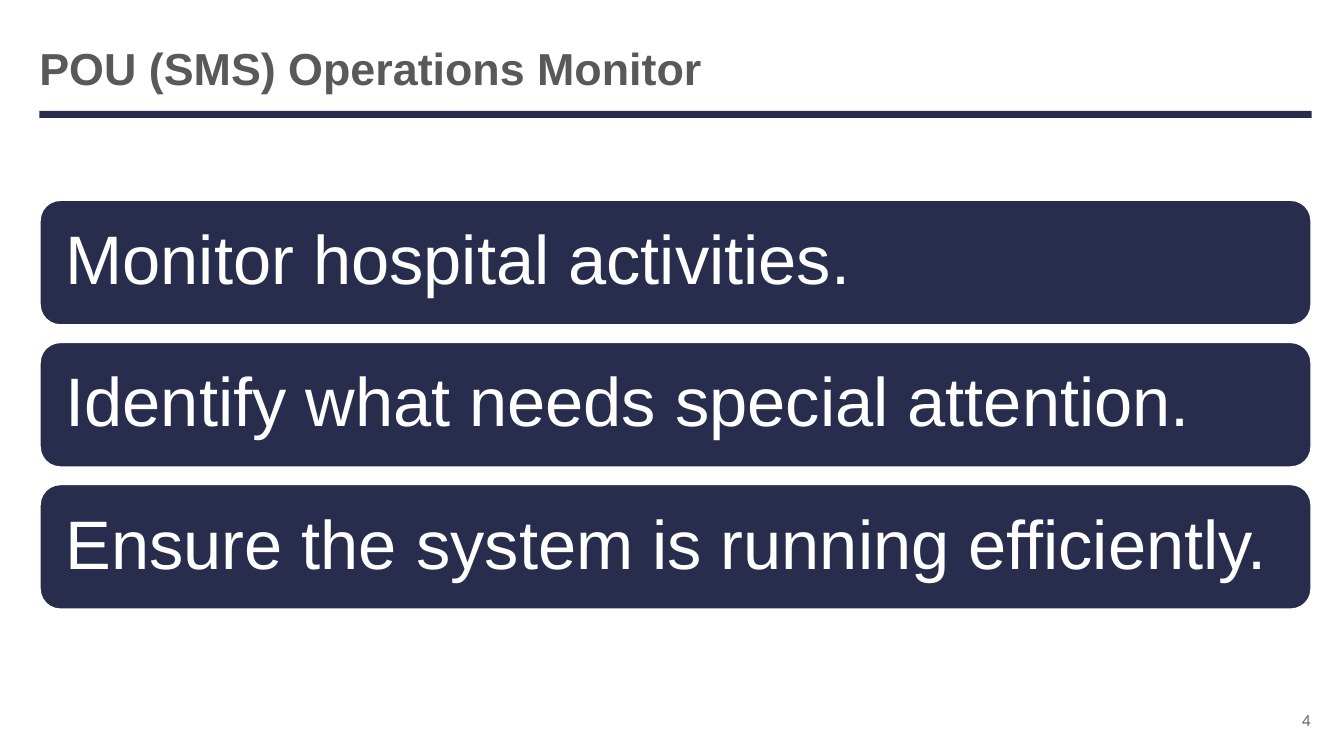
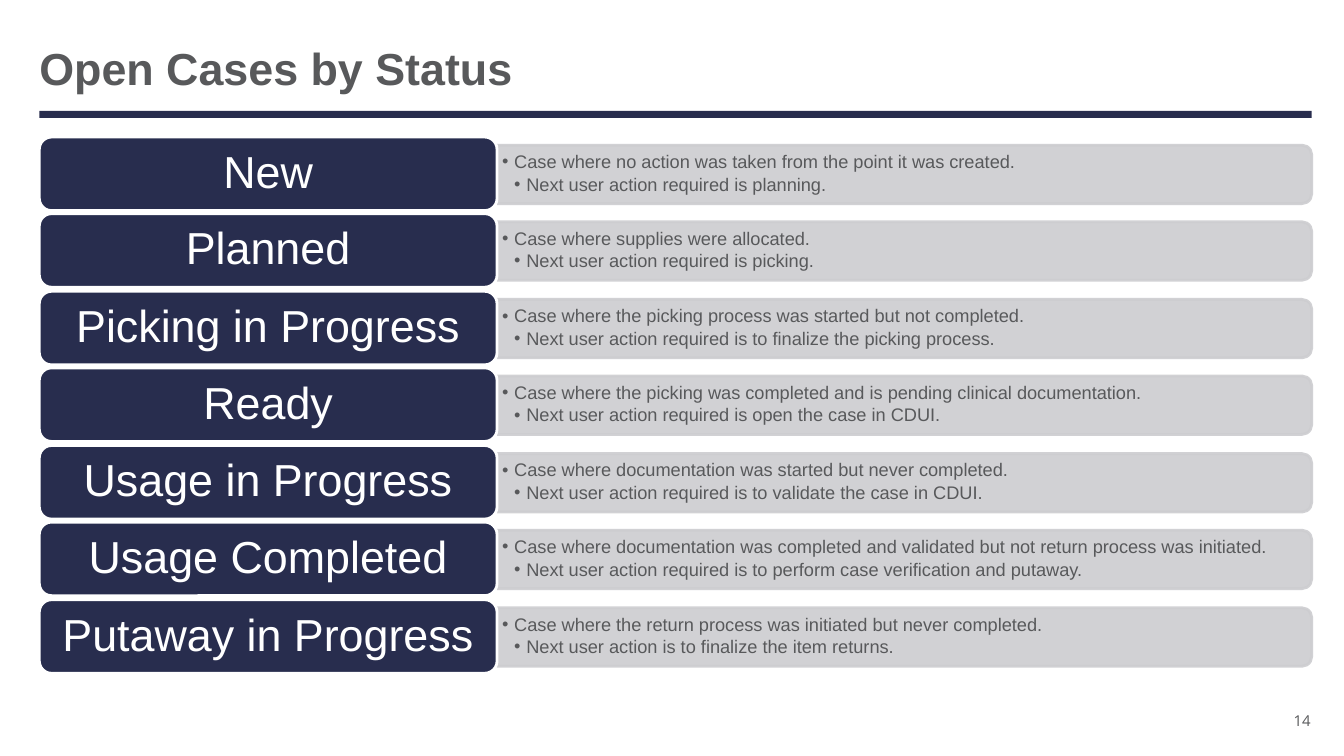
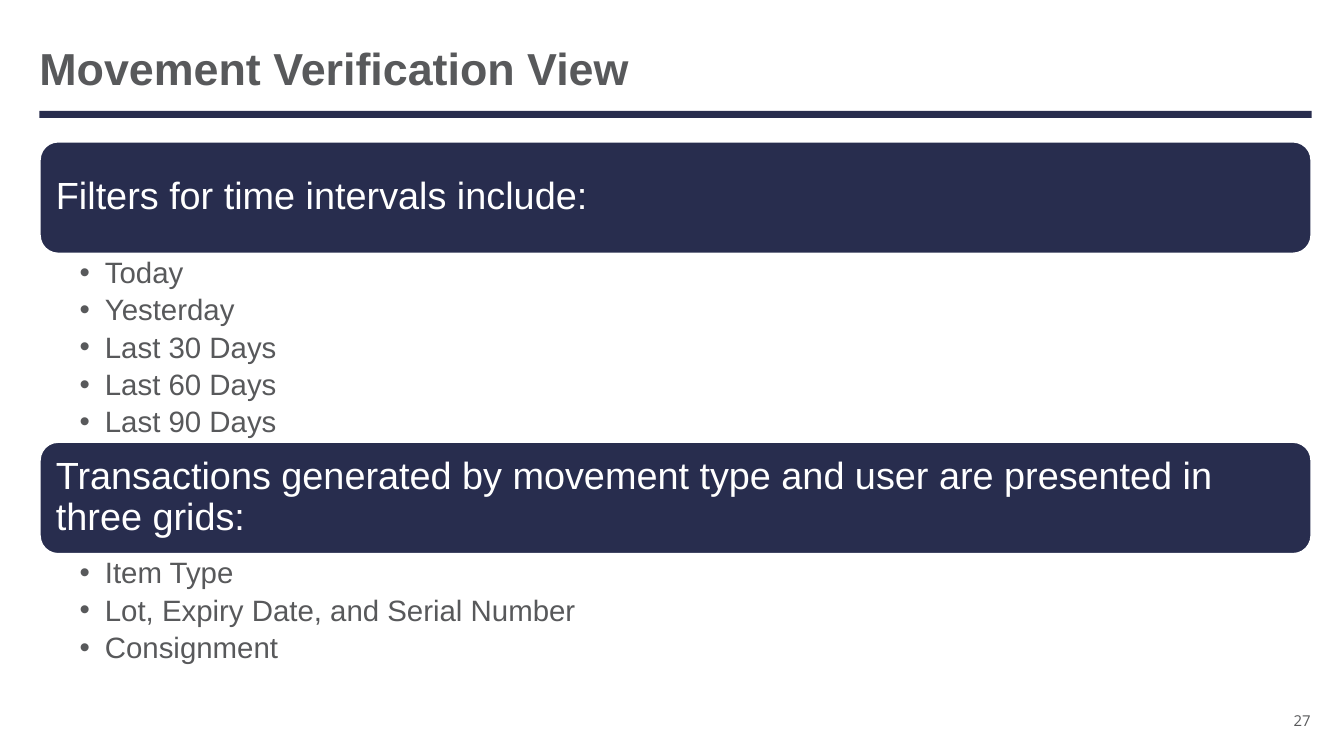
from pptx import Presentation
from pptx.dml.color import RGBColor
from pptx.enum.shapes import MSO_SHAPE as Preset
from pptx.enum.text import MSO_ANCHOR as Anchor, PP_ALIGN as Align
from pptx.oxml.ns import qn
from pptx.util import Pt
from lxml.etree import SubElement

PX = 9144  # 100 px to the inch
NAVY = RGBColor(0x28, 0x2D, 0x4E)
GRAY = RGBColor(0x58, 0x59, 0x5B)
SILVER = RGBColor(0xCD, 0xCD, 0xD0)
WHITE = RGBColor(0xFF, 0xFF, 0xFF)

LEFT, WIDTH = 39, 1262
LABEL_WIDTH = 454
DETAIL_LEFT, DETAIL_WIDTH, DETAIL_HEIGHT = 493, 808, 58


def write(shape, lines, size, color=GRAY, font="Arial", bold=False, align=Align.LEFT,
          anchor=Anchor.MIDDLE, insets=(0, 0, 0, 0), line_spacing=0.9, space_after=0,
          hang=0, nested=False):
    """Fill a shape with paragraphs; hang gives bullets, nested steps each one deeper."""
    frame = shape.text_frame
    frame.word_wrap = True
    frame.vertical_anchor = anchor
    frame.margin_left, frame.margin_top, frame.margin_right, frame.margin_bottom = (
        inset * PX for inset in insets)
    for index, line in enumerate(lines):
        paragraph = frame.add_paragraph() if index else frame.paragraphs[0]
        paragraph.alignment = align
        paragraph.line_spacing = line_spacing
        paragraph.space_after = Pt(space_after)
        run = paragraph.add_run()
        run.text = line
        run.font.name, run.font.size, run.font.bold = font, Pt(size), bold
        run.font.color.rgb = color
        if hang:
            level = index + 1 if nested else 1
            paragraph.level = level
            properties = paragraph._p.get_or_add_pPr()
            properties.set("marL", str(level * hang * PX))
            properties.set("indent", str(-hang * PX))
            SubElement(properties, qn("a:buFont")).set("typeface", font)
            SubElement(properties, qn("a:buChar")).set("char", "•")


def add_block(slide, preset, left, top, width, height, fill=NAVY, line=WHITE):
    shape = slide.shapes.add_shape(preset, left * PX, top * PX, width * PX, height * PX)
    shape.shadow.inherit = False
    shape.fill.solid()
    shape.fill.fore_color.rgb = fill
    shape.line.color.rgb = line
    shape.line.width = Pt(2)
    return shape


presentation = Presentation()
presentation.slide_width, presentation.slide_height = 1333 * PX, 750 * PX

# Shared title, rule and page number
slides = []
for title, number in (("POU (SMS) Operations Monitor", "4"),
                      ("Open Cases by Status", "14"),
                      ("Movement Verification View", "27")):
    slide = presentation.slides.add_slide(presentation.slide_layouts[6])
    rule = add_block(slide, Preset.RECTANGLE, LEFT, 110, WIDTH, 7)
    rule.line.fill.background()
    title_box = slide.shapes.add_textbox(LEFT * PX, 41 * PX, WIDTH * PX, 61 * PX)
    write(title_box, [title], 32, bold=True, insets=(0, 5, 0, 5), line_spacing=0.85)
    number_box = slide.shapes.add_textbox(1250 * PX, 692 * PX, 50 * PX, 46 * PX)
    write(number_box, [number], 10.7, font="Open Sans", align=Align.RIGHT, line_spacing=1.0)
    slides.append(slide)
monitor_slide, status_slide, movement_slide = slides

# Operations monitor: three goals
goals = ("Monitor hospital activities.",
         "Identify what needs special attention.",
         "Ensure the system is running efficiently.")
for row, goal in enumerate(goals):
    bar = add_block(monitor_slide, Preset.ROUNDED_RECTANGLE, LEFT, 198 + row * 141, WIDTH, 125)
    write(bar, [goal], 49, WHITE, insets=(20, 20, 20, 20))

# Open cases: a label and its explanation in each row
statuses = (
    ("New", "Case where no action was taken from the point it was created.",
     "Next user action required is planning."),
    ("Planned", "Case where supplies were allocated.",
     "Next user action required is picking."),
    ("Picking in Progress", "Case where the picking process was started but not completed.",
     "Next user action required is to finalize the picking process."),
    ("Ready", "Case where the picking was completed and is pending clinical documentation.",
     "Next user action required is open the case in CDUI."),
    ("Usage in Progress", "Case where documentation was started but never completed.",
     "Next user action required is to validate the case in CDUI."),
    ("Usage Completed",
     "Case where documentation was completed and validated but not return process was initiated.",
     "Next user action required is to perform case verification and putaway."),
    ("Putaway in Progress", "Case where the return process was initiated but never completed.",
     "Next user action is to finalize the item returns."),
)
first_top, last_top = 136, 595
for row, (status, *details) in enumerate(statuses):
    top = first_top + row * (last_top - first_top) // (len(statuses) - 1)
    # The panel is drawn upright, then turned about its centre
    turn_offset = (DETAIL_WIDTH - DETAIL_HEIGHT) // 2
    panel = add_block(status_slide, Preset.ROUND_2_SAME_RECTANGLE, DETAIL_LEFT + turn_offset,
                      top + 8 - turn_offset, DETAIL_HEIGHT, DETAIL_WIDTH, SILVER, SILVER)
    panel.rotation = 90
    for color in panel.element.iter(qn("a:srgbClr")):
        SubElement(color, qn("a:alpha")).set("val", "90000")
    detail_box = status_slide.shapes.add_textbox(DETAIL_LEFT * PX, (top + 10) * PX,
                                                 805 * PX, 53 * PX)
    write(detail_box, details, 13, insets=(5, 3, 5, 3), space_after=2, hang=12, nested=True)
    label = add_block(status_slide, Preset.ROUNDED_RECTANGLE, LEFT, top, LABEL_WIDTH, 73)
    write(label, [status], 32, WHITE, align=Align.CENTER, insets=(13, 7, 13, 7))

# Movement verification: headings with bullets below
heading_height = 112
sections = (
    (140, 186, "Filters for time intervals include:",
     ("Today", "Yesterday", "Last 30 Days", "Last 60 Days", "Last 90 Days")),
    (438, 113, "Transactions generated by movement type and user are presented in three grids:",
     ("Item Type", "Lot, Expiry Date, and Serial Number", "Consignment")),
)
for top, list_height, heading, items in sections:
    bar = add_block(movement_slide, Preset.ROUNDED_RECTANGLE, LEFT, top, WIDTH, heading_height)
    write(bar, [heading], 27, WHITE, insets=(11, 11, 11, 11))
    item_box = movement_slide.shapes.add_textbox(LEFT * PX, (top + heading_height) * PX,
                                                 WIDTH * PX, list_height * PX)
    write(item_box, items, 21, anchor=Anchor.TOP, insets=(40, 4, 21, 4), space_after=4, hang=25)

presentation.save("out.pptx")
